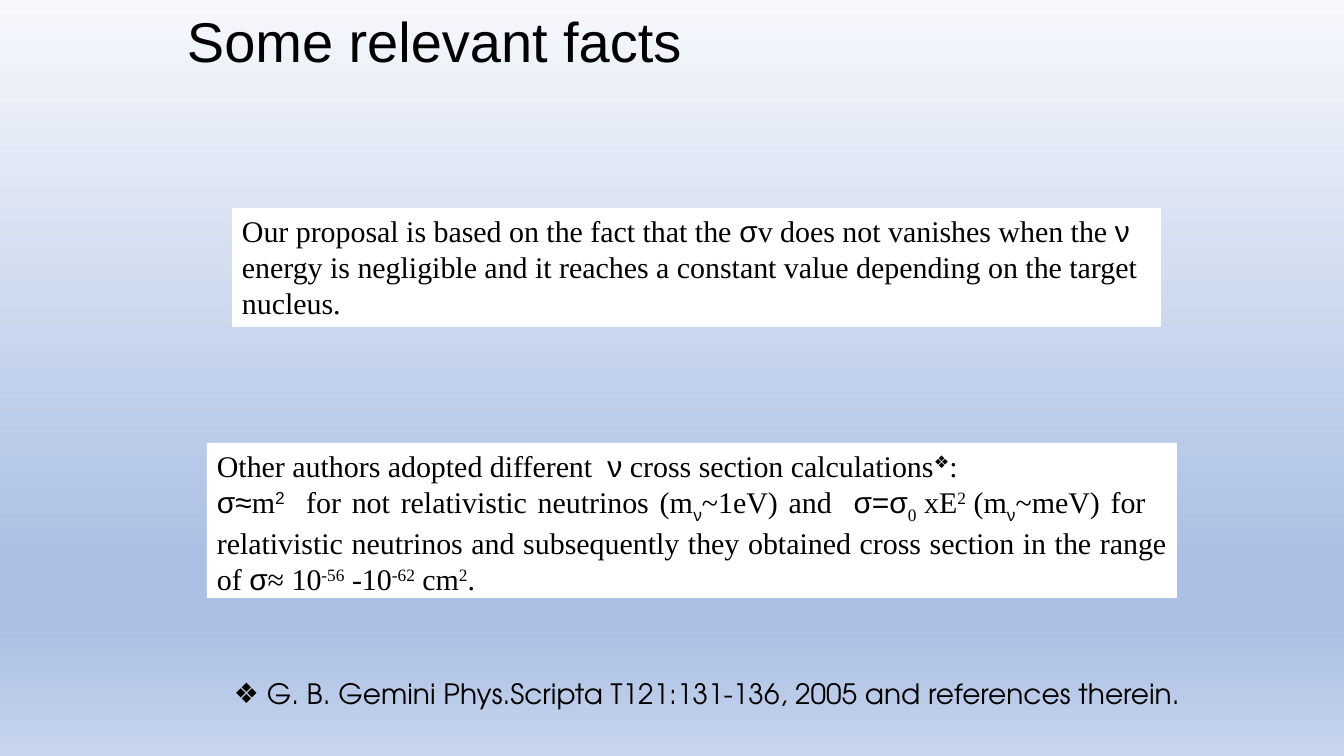
from lxml import etree
from pptx import Presentation
from pptx import util as u
from pptx.dml.color import RGBColor
from pptx.enum import shapes, text
from pptx.oxml.ns import qn

SERIF, SANS, GEOMETRIC = "Times New Roman", "Arial", "TeX Gyre Adventor"
SUP, SUB = 30000, -25000
BLACK, WHITE = "000000", "FFFFFF"
BACKGROUND = [(0, "F6F8FC"), (74, "ABC0E4"), (83, "ABC0E4"), (100, "C7D5ED")]

TITLE = [[("Some relevant facts", SANS, 0)]]
PROPOSAL = [[
    ("Our proposal is based on the fact that the ", SERIF, 0),
    ("σ", SANS, 0),
    ("v does not vanishes when the ", SERIF, 0),
    ("ν", SANS, 0),
    (" energy is negligible and it reaches a constant value depending on the target nucleus.", SERIF, 0),
]]
CALCULATIONS = [
    [
        ("Other authors adopted different  ", SERIF, 0),
        ("ν", SANS, 0),
        (" cross section calculations", SERIF, 0),
        ("❖", SANS, SUP),
        (":", SERIF, 0),
    ],
    [
        ("σ≈", SANS, 0),
        ("m", SERIF, 0),
        ("2", SANS, SUP),
        ("  for not relativistic neutrinos (m", SERIF, 0),
        ("ν", SANS, SUB),
        ("~1eV) and  ", SERIF, 0),
        ("σ=σ", SANS, 0),
        ("0 ", SERIF, SUB),
        ("xE", SERIF, 0),
        ("2 ", SERIF, SUP),
        ("(m", SERIF, 0),
        ("ν", SANS, SUB),
        ("~meV) for   relativistic neutrinos and subsequently they obtained "
         "cross section in the range of ", SERIF, 0),
        ("σ", SANS, 0),
        ("≈ 10", SERIF, 0),
        ("-56", SERIF, SUP),
        (" -10", SERIF, 0),
        ("-62", SERIF, SUP),
        (" cm", SERIF, 0),
        ("2", SERIF, SUP),
        (".", SERIF, 0),
    ],
]
REFERENCE = [[(" G. B. Gemini Phys.Scripta T121:131-136, 2005 and references therein.", GEOMETRIC, 0)]]


def px(n):
    return u.Emu(round(n * 914400 / 100.8))


def rgb(value):
    return RGBColor.from_string(value)


def write(sp, paragraphs, size, align=text.PP_ALIGN.LEFT, wrap=True):
    tf = sp.text_frame
    tf.word_wrap = wrap
    tf.vertical_anchor = text.MSO_ANCHOR.TOP
    for i, parts in enumerate(paragraphs):
        p = tf.add_paragraph() if i else tf.paragraphs[0]
        p.alignment = align
        for words, font, baseline in parts:
            r = p.add_run()
            r.text = words
            r.font.name, r.font.size = font, u.Pt(size)
            r.font.color.rgb = rgb(BLACK)
            if baseline:
                r.font._element.set("baseline", str(baseline))
    return tf


def panel(s, box, paragraphs, align):
    sp = s.shapes.add_shape(shapes.MSO_SHAPE.RECTANGLE, *map(px, box))
    sp.shadow.inherit = False
    sp.fill.solid()
    sp.fill.fore_color.rgb = rgb(WHITE)
    sp.line.fill.background()
    write(sp, paragraphs, 21.4, align)


def paint_background(s):
    fill = s.background.fill
    fill.gradient()
    fill.gradient_angle = 270
    stops = s.element.find(".//" + qn("a:gsLst"))
    for old in list(stops):
        stops.remove(old)
    for percent, color in BACKGROUND:
        gs = etree.SubElement(stops, qn("a:gs"), pos=str(percent * 1000))
        etree.SubElement(gs, qn("a:srgbClr"), val=color)


def main():
    prs = Presentation()
    prs.slide_width, prs.slide_height = px(1344), px(756)
    s = prs.slides.add_slide(prs.slide_layouts[6])
    paint_background(s)

    sp = s.shapes.add_textbox(*map(px, (182, 11, 979, 122)))
    tf = write(sp, TITLE, 40)
    tf.margin_left = tf.margin_right = px(5)
    tf.margin_top = tf.margin_bottom = px(3)
    tf.paragraphs[0].line_spacing = 0.9

    panel(s, (232, 208, 929, 119), PROPOSAL, text.PP_ALIGN.LEFT)
    panel(s, (207, 443, 970, 155), CALCULATIONS, text.PP_ALIGN.JUSTIFY)

    sp = s.shapes.add_textbox(*map(px, (224, 672, 987, 44)))
    p = write(sp, REFERENCE, 20, wrap=False).paragraphs[0]
    pPr = p._p.get_or_add_pPr()
    etree.SubElement(pPr, qn("a:buFont"), typeface=SANS)
    etree.SubElement(pPr, qn("a:buChar"), char="❖")

    prs.save("out.pptx")


if __name__ == "__main__":
    main()
